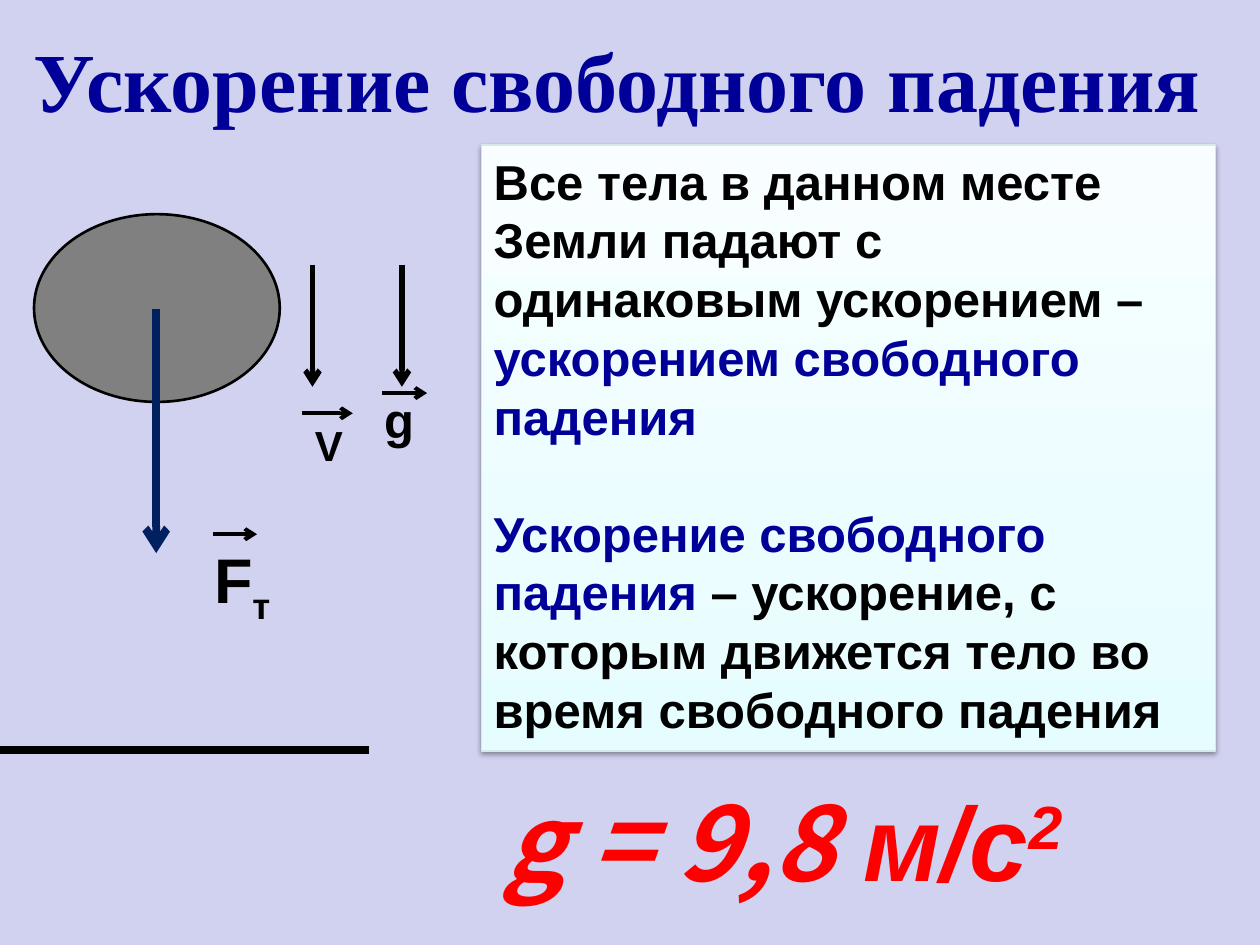
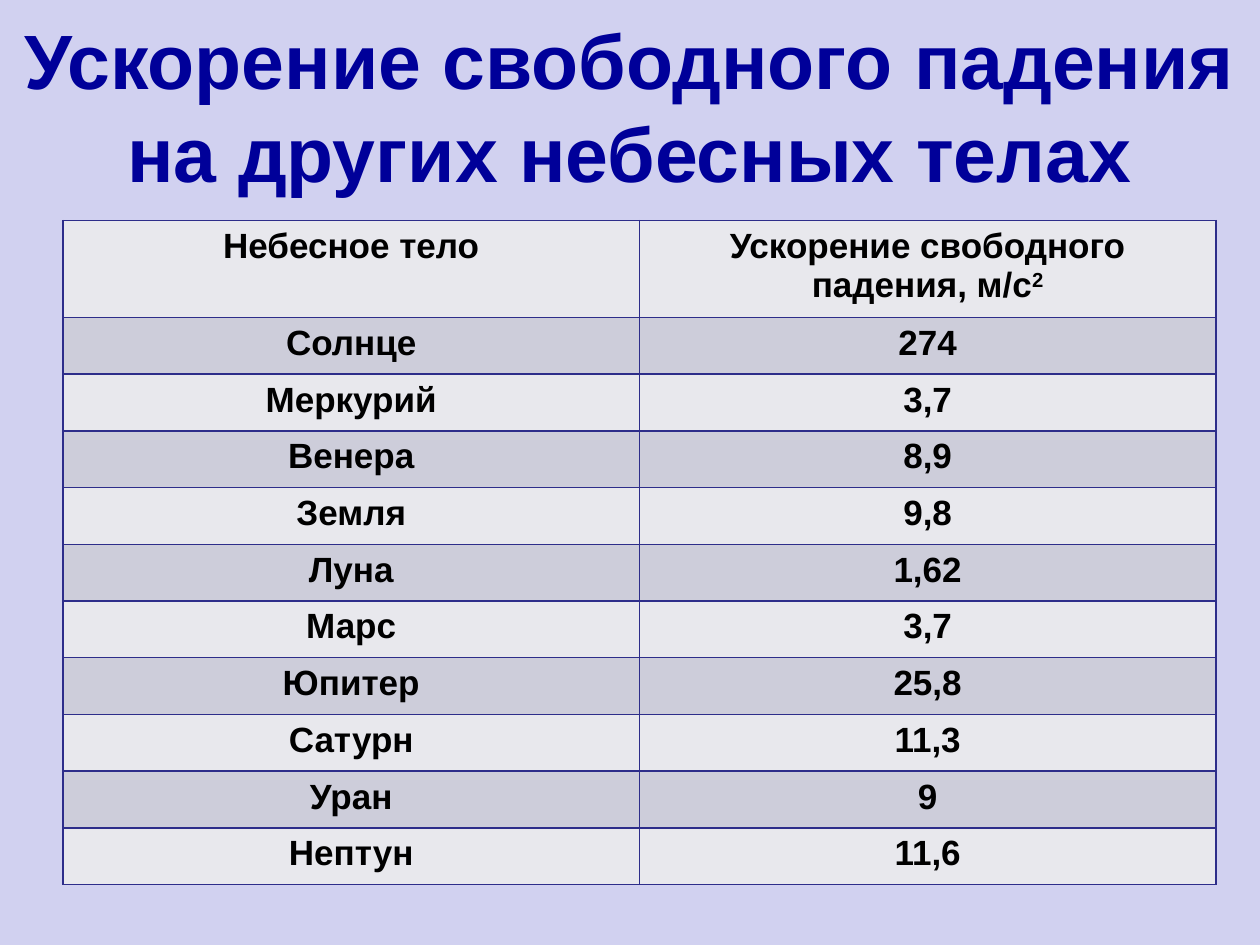
from lxml.etree import SubElement
from pptx import Presentation
from pptx.dml.color import RGBColor
from pptx.enum.shapes import MSO_CONNECTOR, MSO_SHAPE
from pptx.enum.text import MSO_ANCHOR, MSO_AUTO_SIZE, PP_ALIGN
from pptx.oxml import parse_xml
from pptx.oxml.ns import nsdecls, qn
from pptx.util import Emu, Pt

PX = 9144
COLORS = {
    "back": "D1D1F0", "title": "000099", "ink": "000000", "body": "808080",
    "force": "002060", "value": "FF0000", "edge": "D5E8EA",
    "grid": "2D2D8A", "light": "E8E8ED", "dark": "CDCDDA",
}
GLOW = ((0, "E6FDFF"), (35, "ECFDFF"), (100, "F8FEFF"))
PLANETS = (
    ("Солнце", "274"), ("Меркурий", "3,7"), ("Венера", "8,9"),
    ("Земля", "9,8"), ("Луна", "1,62"), ("Марс", "3,7"),
    ("Юпитер", "25,8"), ("Сатурн", "11,3"), ("Уран", "9"), ("Нептун", "11,6"),
)


def rgb(name):
    return RGBColor.from_string(COLORS[name])


def box(*sizes):
    return [Emu(size * PX) for size in sizes]


class Deck:
    """Draws styled elements on the current slide."""

    def __init__(self):
        self.show = Presentation()
        self.show.slide_width, self.show.slide_height = box(1000, 750)

    def start(self, title, area, size, font="Arial"):
        self.slide = self.show.slides.add_slide(self.show.slide_layouts[5])
        self.shapes = self.slide.shapes
        fill = self.slide.background.fill
        fill.solid()
        fill.fore_color.rgb = rgb("back")
        head = self.shapes.title
        head.left, head.top, head.width, head.height = box(*area)
        frame = head.text_frame
        frame.word_wrap = True
        frame.auto_size = MSO_AUTO_SIZE.NONE
        frame.vertical_anchor = MSO_ANCHOR.MIDDLE
        self.text(frame, [[(title, {})]], size, "title", PP_ALIGN.CENTER, font)

    def text(self, frame, paras, size, color="ink", align=PP_ALIGN.LEFT,
             font="Arial", gap=0, slant=False):
        for index, runs in enumerate(paras):
            para = frame.add_paragraph() if index else frame.paragraphs[0]
            para.alignment = align
            para.font.size, para.font.bold = Pt(size), True
            para.font.italic = slant
            para.font.name = font
            para.font.color.rgb = rgb(color)
            if index:
                para.space_before = Pt(gap)
            for words, style in runs:
                run = para.add_run()
                run.text = words
                if "color" in style:
                    run.font.color.rgb = rgb(style["color"])
                if "font" in style:
                    run.font.name = style["font"]
                if "base" in style:
                    run.font._element.set("baseline", str(style["base"] * 1000))

    def label(self, area, runs, size, **style):
        frame = self.shapes.add_textbox(*box(*area)).text_frame
        frame.word_wrap = True
        frame.auto_size = MSO_AUTO_SIZE.SHAPE_TO_FIT_TEXT
        self.text(frame, [runs], size, **style)

    def shape(self, kind, area, fill, edge, width):
        item = self.shapes.add_shape(kind, *box(*area))
        item.shadow.inherit = False
        item.fill.solid()
        item.fill.fore_color.rgb = rgb(fill)
        item.line.color.rgb = rgb(edge)
        item.line.width = Pt(width)
        return item

    def panel(self, area, paras, size, gap):
        item = self.shape(MSO_SHAPE.RECTANGLE, area, "light", "edge", 0.75)
        props = item._element.spPr
        stops = "".join(
            f'<a:gs pos="{pos * 1000}"><a:srgbClr val="{tint}"/></a:gs>'
            for pos, tint in GLOW)
        props.replace(props.find(qn("a:solidFill")), parse_xml(
            f'<a:gradFill {nsdecls("a")} rotWithShape="1"><a:gsLst>{stops}</a:gsLst>'
            '<a:lin ang="16200000" scaled="1"/></a:gradFill>'))
        shade = SubElement(props.find(qn("a:effectLst")), qn("a:outerShdw"),
                           blurRad=str(Pt(3.1)), dist=str(Pt(1.6)),
                           dir="5400000", rotWithShape="0")
        tint = SubElement(shade, qn("a:srgbClr"), val=COLORS["ink"])
        SubElement(tint, qn("a:alpha"), val="38000")
        frame = item.text_frame
        frame.word_wrap = True
        frame.vertical_anchor = MSO_ANCHOR.TOP
        frame.auto_size = MSO_AUTO_SIZE.SHAPE_TO_FIT_TEXT
        self.text(frame, paras, size, gap=gap)

    def line(self, left, top, right, low, width, color="ink", arrow=True):
        item = self.shapes.add_connector(
            MSO_CONNECTOR.STRAIGHT, *box(left, top, right, low))
        item.line.color.rgb = rgb(color)
        item.line.width = Pt(width)
        props = item._element.spPr
        if arrow:
            SubElement(props.find(qn("a:ln")), qn("a:tailEnd"), type="arrow")
        SubElement(props, qn("a:effectLst"))

    def table(self, area, rows, heights, size):
        grid = self.shapes.add_table(len(rows), len(rows[0]), *box(*area)).table
        grid.first_row = grid.horz_banding = False
        for index, (row, height) in enumerate(zip(rows, heights)):
            grid.rows[index].height = Emu(height * PX)
            for cell, runs in zip(grid.rows[index].cells, row):
                self.text(cell.text_frame, [runs], size, align=PP_ALIGN.CENTER)
                self.frame(cell)
                cell.fill.solid()
                cell.fill.fore_color.rgb = rgb("dark" if index % 2 else "light")

    def frame(self, cell):
        props = cell._tc.get_or_add_tcPr()
        for side in "LRTB":
            edge = SubElement(props, qn(f"a:ln{side}"), w=str(Pt(1)))
            fill = SubElement(edge, qn("a:solidFill"))
            SubElement(fill, qn("a:srgbClr"), val=COLORS["grid"])


def motion(deck):
    deck.start("Ускорение свободного падения", (0, 0, 980, 125), 48,
               "Times New Roman")
    deck.shape(MSO_SHAPE.OVAL, (27, 170, 195, 149), "body", "ink", 1.5)
    deck.line(0, 595, 293, 595, 4.5, arrow=False)
    deck.line(124, 245, 124, 439, 4.5, "force")
    for left in (248, 319):
        deck.line(left, 210, left, 307, 3)
    for left, top, width in ((169, 424, 35), (240, 328, 40), (303, 312, 36)):
        deck.line(left, top, left + width, top, 2.25)
    deck.label((160, 424, 89, 67), [("F", {}), ("т", {"base": -25})], 36)
    deck.label((240, 328, 55, 51), [("V", {})], 24)
    deck.label((295, 304, 55, 57), [("g", {})], 28)
    deck.label((390, 611, 551, 111), [
        ("g = 9,8", {}),
        (" м/с", {"font": "Arial"}),
        ("2", {"font": "Arial", "base": 30}),
    ], 60, color="value", font="Noto Sans CJK KR", slant=True)
    term = {"color": "title"}
    deck.panel((382, 115, 583, 481), [
        [("Все тела в данном месте Земли падают с одинаковым ускорением – ", {}),
         ("ускорением свободного падения", term)],
        [("Ускорение свободного падения ", term),
         ("– ускорение, с которым движется тело во время свободного падения", {})],
    ], 28, 33)


def planets(deck):
    deck.start("Ускорение свободного падения на других небесных телах",
               (0, 21, 1000, 125), 44)
    head = [[("Небесное тело", {})],
            [("Ускорение свободного падения, м/c", {}), ("2", {"base": 30})]]
    rows = [head] + [[[(words, {})] for words in pair] for pair in PLANETS]
    heights = [77] + [45] * len(PLANETS)
    deck.table((50, 175, 915, sum(heights)), rows, heights, 20)


def main():
    deck = Deck()
    motion(deck)
    planets(deck)
    deck.show.save("out.pptx")


if __name__ == "__main__":
    main()
